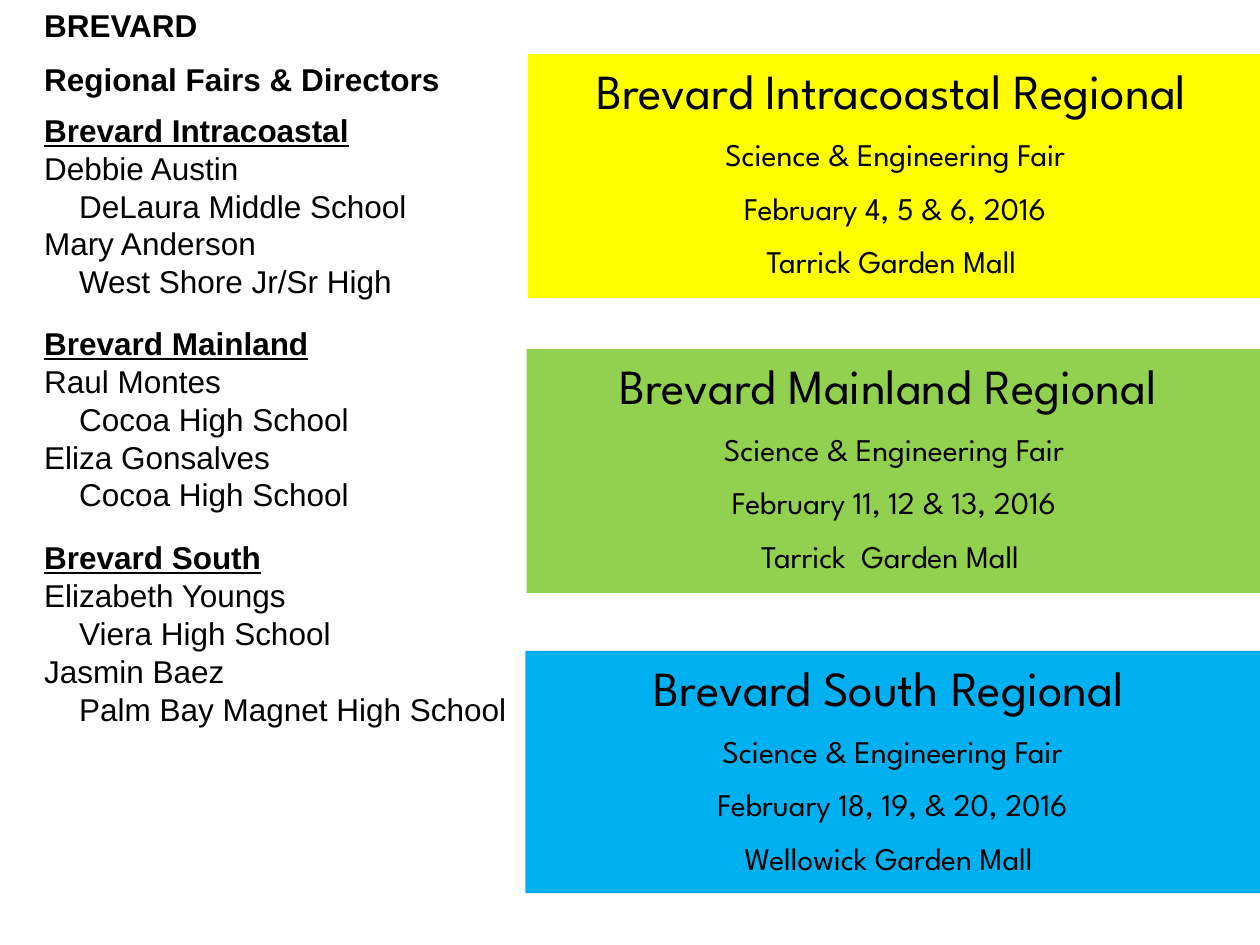
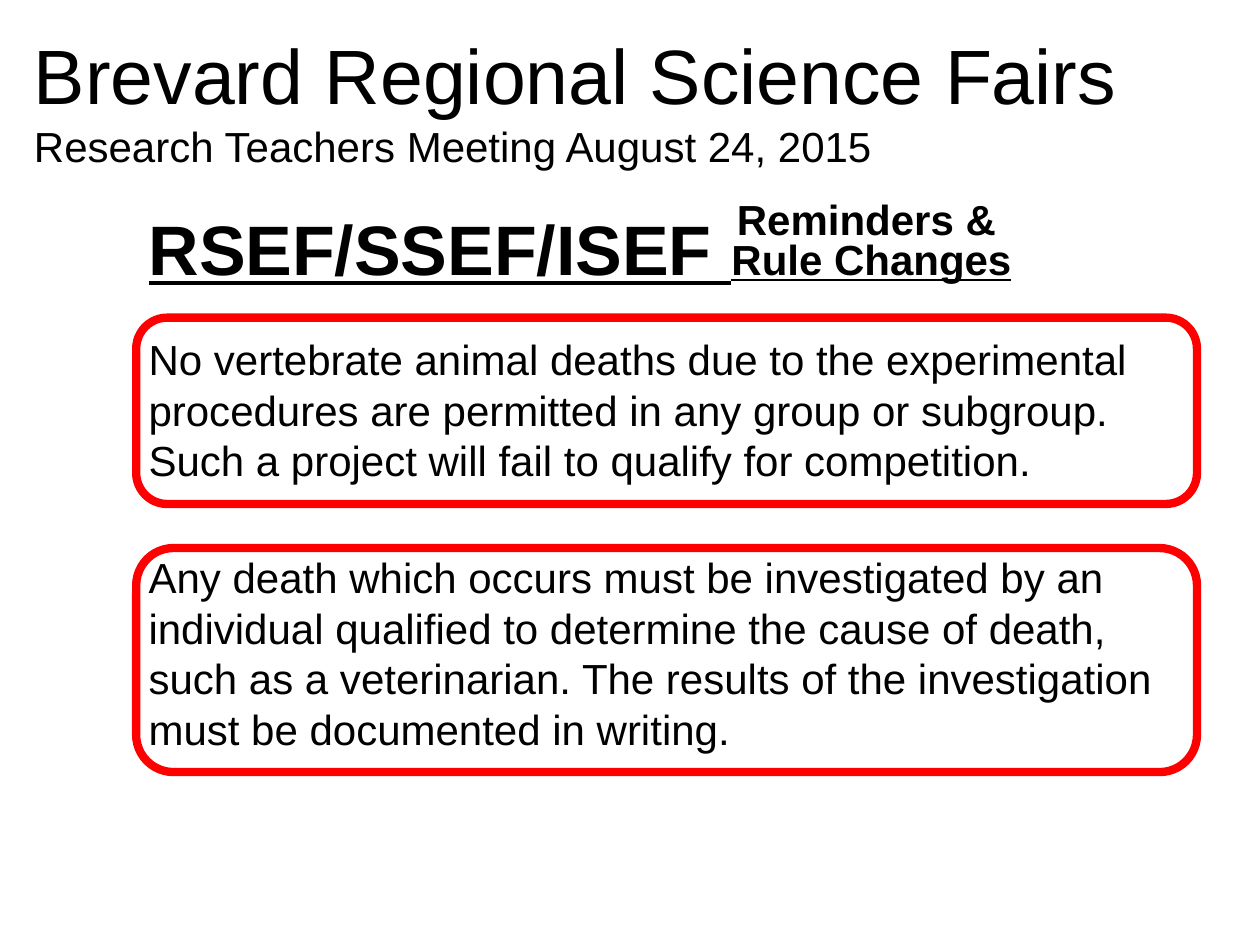
from lxml.etree import SubElement
from pptx import Presentation
from pptx.dml.color import RGBColor as Rgb
from pptx.enum.shapes import MSO_SHAPE as Kind
from pptx.enum.text import MSO_ANCHOR as Anchor, MSO_AUTO_SIZE as Fit, PP_ALIGN as Align
from pptx.oxml.ns import qn
from pptx.util import Pt

HEX = {"ink": "000000", "gold": "FFFF00", "green": "92D050",
       "blue": "00B0F0", "red": "FF0000"}
SANS, GEO = "Arial", "League Spartan"
LEAD = 1.2  # line height per point of type

HEAD = {"bold": True, "underline": True}
FRAME = {"auto_size": Fit.NONE, "word_wrap": True, "vertical_anchor": Anchor.TOP,
         "margin_left": Pt(7.2), "margin_right": Pt(7.2),
         "margin_top": Pt(3.6), "margin_bottom": Pt(3.6)}

# Fair name, space above, then director and school pairs
STAFF = [
    ("Brevard Intracoastal", 0, [("Debbie Austin", "DeLaura Middle School"),
                                 ("Mary Anderson", "West Shore Jr/Sr High")]),
    ("Brevard Mainland", 13.8, [("Raul Montes", "Cocoa High School"),
                                ("Eliza Gonsalves", "Cocoa High School")]),
    ("Brevard South", 14.4, [("Elizabeth Youngs", "Viera High School"),
                             ("Jasmin Baez", "Palm Bay Magnet High School")]),
]

# Box, colour, title runs, date, place
FAIRS = [
    ((301.7, 31, 419.8, 139.4), "gold",
     [("Brevard Intracoastal Regional", 28), (" ", 18)],
     "February 4, 5 & 6, 2016", "Tarrick Garden Mall "),
    ((301, 199.5, 419.8, 139.4), "green",
     [("Brevard Mainland Regional ", 28)],
     "February 11, 12 & 13, 2016", "Tarrick  Garden Mall "),
    ((300.2, 372, 419.8, 138.4), "blue",
     [("Brevard South Regional", 28), (" ", 18)],
     "February 18, 19, & 20, 2016", "Wellowick Garden Mall "),
]

# Outline box, drop of the text below its top, text
RULES = [
    ((77.8, 181.5, 606.2, 106.5), 5.8,
     "No vertebrate animal deaths due to the experimental procedures are permitted "
     "in any group or subgroup. Such a project will fail to qualify for competition."),
    ((77.8, 313.2, 606.2, 128), -1.4,
     "Any death which occurs must be investigated by an individual qualified to "
     "determine the cause of death, such as a veterinarian. The results of the "
     "investigation must be documented in writing."),
]


def tint(name):
    return Rgb.from_string(HEX[name])


def apply(item, form):
    for key, value in form.items():
        setattr(item, key, value)


def place(shape, box):
    """Move a placeholder to a box in points."""
    apply(shape, dict(zip(("left", "top", "width", "height"), map(Pt, box))))
    return shape


def line(runs, above=0, indent=0, align=Align.LEFT, font=SANS, **form):
    """Describe a paragraph; runs holds (text, size) pairs."""
    return runs, above, indent, align, font, form


def write(shape, lines):
    """Fill a shape with the described paragraphs."""
    frame = shape.text_frame
    apply(frame, FRAME)
    for i, (runs, above, indent, align, font, form) in enumerate(lines):
        para = frame.paragraphs[0] if i == 0 else frame.add_paragraph()
        size = max(pt for _, pt in runs)
        apply(para, {"alignment": align, "space_before": Pt(above),
                     "space_after": Pt(0), "line_spacing": Pt(size * LEAD)})
        props = para._p.get_or_add_pPr()
        props.set("marL", str(Pt(indent)))
        props.set("indent", "0")
        SubElement(props, qn("a:buNone"))
        for text, pt in runs:
            run = para.add_run()
            run.text = text
            apply(run.font, {"name": font, "size": Pt(pt), **form})
            run.font.color.rgb = tint("ink")


def label(slide, box, lines):
    write(slide.shapes.add_textbox(*map(Pt, box)), lines)


def panel(slide, kind, box, fill=None, edge=None):
    """Add a flat shape with a fill or an outline."""
    shape = slide.shapes.add_shape(kind, *map(Pt, box))
    shape.shadow.inherit = False
    if fill:
        shape.fill.solid()
        shape.fill.fore_color.rgb = tint(fill)
    else:
        shape.fill.background()
    if edge:
        shape.line.color.rgb = tint(edge)
        shape.line.width = Pt(4.75)
    else:
        shape.line.fill.background()
    return shape


def roster(shape, box):
    """List the directors under each fair."""
    lines = []
    for fair, above, pairs in STAFF:
        lines.append(line([(fair, 18)], above, **HEAD))
        for name, school in pairs:
            lines += [line([(name, 18)]), line([(school, 18)], indent=20)]
    write(place(shape, box), lines)


def card(slide, box, fill, title, date, site):
    """Show one fair on a coloured card."""
    look = {"align": Align.CENTER, "font": GEO}
    rest = ("Science & Engineering Fair", date, site)
    write(panel(slide, Kind.RECTANGLE, box, fill=fill),
          [line(title, **look)] + [line([(text, 18)], 9, **look) for text in rest])


def rule(slide, box, drop, text):
    """Show one rule inside a red outline."""
    x, y, w, h = box
    label(slide, (x, y + drop, w, h - drop), [line([(text, 24)])])
    panel(slide, Kind.ROUNDED_RECTANGLE, box, edge="red")


def banner(slide, box):
    """Set the large heading with its two small stacked lines."""
    x, y, w, h = box
    label(slide, (x, y + 6.5, w, h - 6.5),
          [line([("RSEF/SSEF/ISEF ", 40), ("Rule Changes", 24)], **HEAD)])
    label(slide, (x + 336.2, y, 228, 36), [line([("Reminders &", 24)], bold=True)])


def fairs(deck):
    """Slide of directors and fair dates."""
    slide = deck.slides.add_slide(deck.slide_layouts[1])
    write(place(slide.shapes.title, (18, 0, 258, 61)),
          [line([("BREVARD", 18)], bold=True),
           line([("Regional Fairs & Directors", 18)], 9, bold=True)])
    roster(slide.placeholders[1], (18, 59.8, 288, 386.6))
    for item in FAIRS:
        card(slide, *item)


def rules(deck):
    """Slide of reminders and rule changes."""
    slide = deck.slides.add_slide(deck.slide_layouts[5])
    write(place(slide.shapes.title, (12.2, 12.2, 684, 89.3)),
          [line([("Brevard Regional Science Fairs", 44)]),
           line([("Research Teachers Meeting August 24, 2015", 24)])])
    banner(slide, (77.8, 107.3, 642.2, 62))
    for item in RULES:
        rule(slide, *item)


def main():
    deck = Presentation()
    apply(deck, {"slide_width": Pt(720), "slide_height": Pt(540)})
    fairs(deck)
    rules(deck)
    deck.save("out.pptx")


if __name__ == "__main__":
    main()
